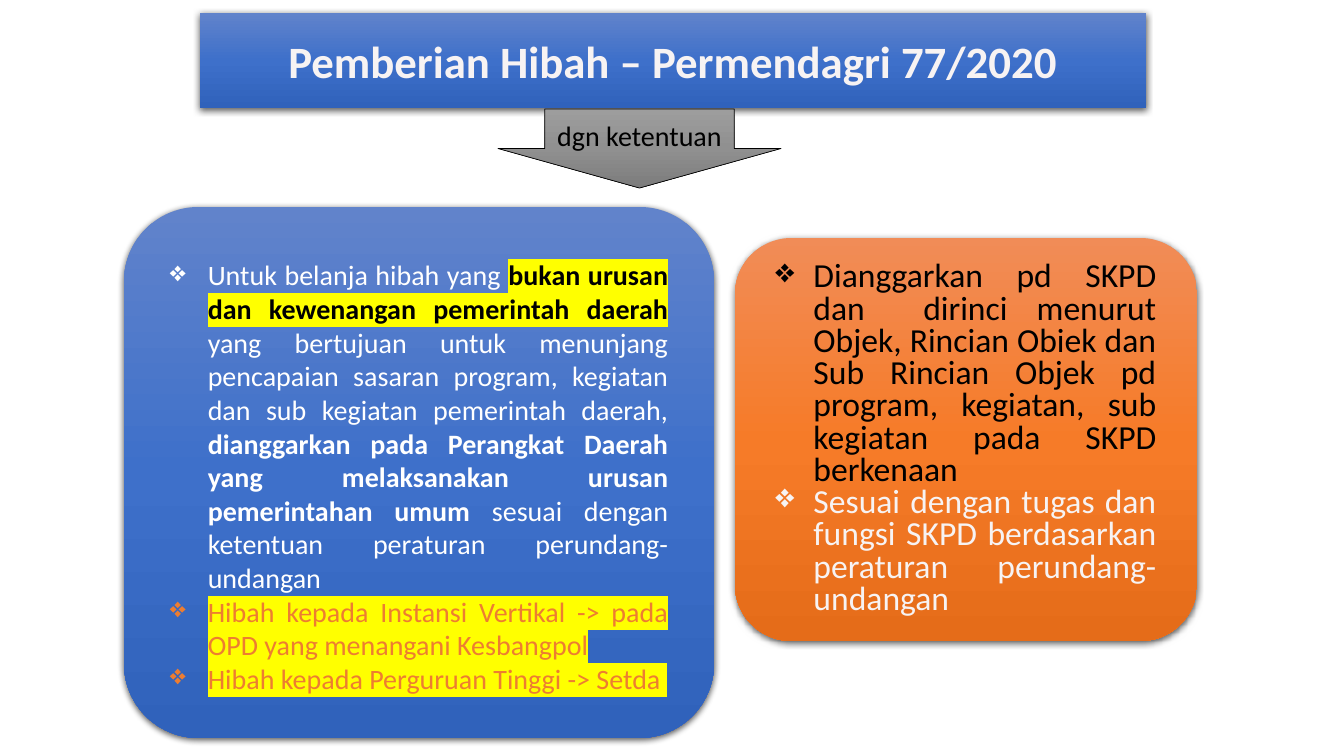
import copy
import pptx
import pptx.util
import pptx.dml.color
import pptx.enum.shapes
import pptx.enum.text
import pptx.oxml
import pptx.oxml.ns

RGB = pptx.dml.color.RGBColor
Pt = pptx.util.Pt
KIND = pptx.enum.shapes.MSO_SHAPE
ALIGN = pptx.enum.text.PP_ALIGN
qn = pptx.oxml.ns.qn
NS = pptx.oxml.ns.nsdecls("a")

SCALE = 914400 / 100.8
FONT = "Calibri"
INDENT = 38

BLACK = RGB(0x00, 0x00, 0x00)
WHITE = RGB(0xFF, 0xFF, 0xFF)
PALE = RGB(0xF7, 0xF3, 0xF3)
AMBER = RGB(0xED, 0x7D, 0x31)
BLUES = [RGB(0x61, 0x83, 0xCB), RGB(0x3E, 0x70, 0xCA), RGB(0x30, 0x62, 0xBB)]
ORANGES = [RGB(0xF1, 0x8C, 0x57), RGB(0xF6, 0x7B, 0x28), RGB(0xE5, 0x6C, 0x19)]
GRAYS = [RGB(0x9D, 0x9D, 0x9D), RGB(0x90, 0x90, 0x90), RGB(0x7C, 0x7C, 0x7C)]

# Each item is a list of runs: text, colour, bold, marked in yellow
DUTIES = [
    [
        ("Untuk belanja hibah yang ", WHITE, False, False),
        ("bukan urusan dan kewenangan pemerintah daerah", BLACK, True, True),
        (" yang bertujuan untuk menunjang pencapaian sasaran program, kegiatan "
         "dan sub kegiatan pemerintah daerah, ", WHITE, False, False),
        ("dianggarkan pada Perangkat Daerah yang melaksanakan urusan "
         "pemerintahan umum ", WHITE, True, False),
        ("sesuai dengan ketentuan peraturan perundang-undangan ", WHITE, False, False),
    ],
    [("Hibah kepada Instansi Vertikal -> pada OPD yang menangani Kesbangpol",
      AMBER, False, True)],
    [("Hibah kepada Perguruan Tinggi -> Setda ", AMBER, False, True)],
]
BUDGET = [
    [("Dianggarkan pd SKPD dan  dirinci menurut Objek, Rincian Obiek dan Sub "
      "Rincian Objek pd program, kegiatan, sub kegiatan pada SKPD berkenaan",
      BLACK, False, False)],
    [("Sesuai dengan tugas dan fungsi SKPD berdasarkan peraturan "
      "perundang-undangan", PALE, False, False)],
]


def px(n):
    return pptx.util.Emu(round(n * SCALE))


def shade(shape, colors):
    """Fill from top to bottom with three colours."""
    shape.fill.gradient()
    shape.fill.gradient_angle = 270
    stops = shape._element.spPr.find(".//" + qn("a:gsLst"))
    stops.append(copy.deepcopy(stops[-1]))
    for i, (stop, color) in enumerate(zip(shape.fill.gradient_stops, colors)):
        stop.position = i / 2
        stop.color.rgb = color


def lift(shape):
    """Drop a soft shadow below the shape, with no outline."""
    shape.line.fill.background()
    shape.shadow.inherit = False
    glow = pptx.oxml.parse_xml(
        f'<a:outerShdw {NS} blurRad="57150" dist="19050" dir="5400000" '
        'algn="ctr" rotWithShape="0"><a:srgbClr val="000000">'
        '<a:alpha val="63000"/></a:srgbClr></a:outerShdw>')
    shape._element.spPr.find(qn("a:effectLst")).append(glow)


def style(run, size, color, bold=False, mark=False):
    font = run.font
    font.name, font.size, font.bold = FONT, Pt(size), bold
    font.color.rgb = color
    if mark:
        tint = pptx.oxml.parse_xml(
            f'<a:highlight {NS}><a:srgbClr val="FFFF00"/></a:highlight>')
        run._r.rPr.find(qn("a:solidFill")).addnext(tint)


def label(shape, text, size, color, bold=False):
    frame = shape.text_frame
    frame.text = text
    frame.word_wrap = True
    frame.auto_size = pptx.enum.text.MSO_AUTO_SIZE.NONE
    frame.vertical_anchor = pptx.enum.text.MSO_ANCHOR.MIDDLE
    para = frame.paragraphs[0]
    para.alignment = ALIGN.CENTER
    style(para.runs[0], size, color, bold)


def bullet(para):
    props = para._p.get_or_add_pPr()
    props.set("marL", str(px(INDENT)))
    props.set("indent", str(-px(INDENT)))
    props.append(pptx.oxml.parse_xml(f'<a:buChar {NS} char="❖"/>'))


def banner(slide, box, text):
    title = slide.shapes.title
    title.left, title.top, title.width, title.height = map(px, box)
    shade(title, BLUES)
    lift(title)
    label(title, text, 32, PALE, True)


def arrow(slide, box, text):
    shape = slide.shapes.add_shape(KIND.DOWN_ARROW, *map(px, box))
    shape.adjustments[0] = 0.67
    shape.adjustments[1] = 0.5
    shade(shape, GRAYS)
    shape.line.color.rgb = BLACK
    shape.line.width = Pt(0.5)
    shape.shadow.inherit = False
    label(shape, text, 20, BLACK)


def panel(slide, box, colors, items, size, space, top):
    shape = slide.shapes.add_shape(KIND.ROUNDED_RECTANGLE, *map(px, box))
    shape.adjustments[0] = 0.14
    shade(shape, colors)
    lift(shape)
    frame = shape.text_frame
    frame.word_wrap = True
    frame.vertical_anchor = pptx.enum.text.MSO_ANCHOR.MIDDLE
    frame.margin_left = frame.margin_right = px(24)
    frame.margin_top, frame.margin_bottom = px(top), px(5)
    for i, item in enumerate(items):
        para = frame.add_paragraph() if i else frame.paragraphs[0]
        bullet(para)
        para.alignment = ALIGN.JUSTIFY
        para.line_spacing = space
        for text, color, bold, mark in item:
            run = para.add_run()
            run.text = text
            style(run, size, color, bold, mark)


def main():
    deck = pptx.Presentation()
    deck.slide_width, deck.slide_height = px(1344), px(756)
    slide = deck.slides.add_slide(deck.slide_layouts[5])

    # Heading and the arrow below it
    banner(slide, (200, 13, 946, 95), "Pemberian Hibah – Permendagri 77/2020")
    arrow(slide, (498, 109, 283, 79), "dgn ketentuan")

    # Rules for the grants
    panel(slide, (124, 207, 590, 531), BLUES, DUTIES, 20, 1.0, 13)
    panel(slide, (735, 238, 462, 403), ORANGES, BUDGET, 24, 0.8, 5)

    deck.save("out.pptx")


if __name__ == "__main__":
    main()
